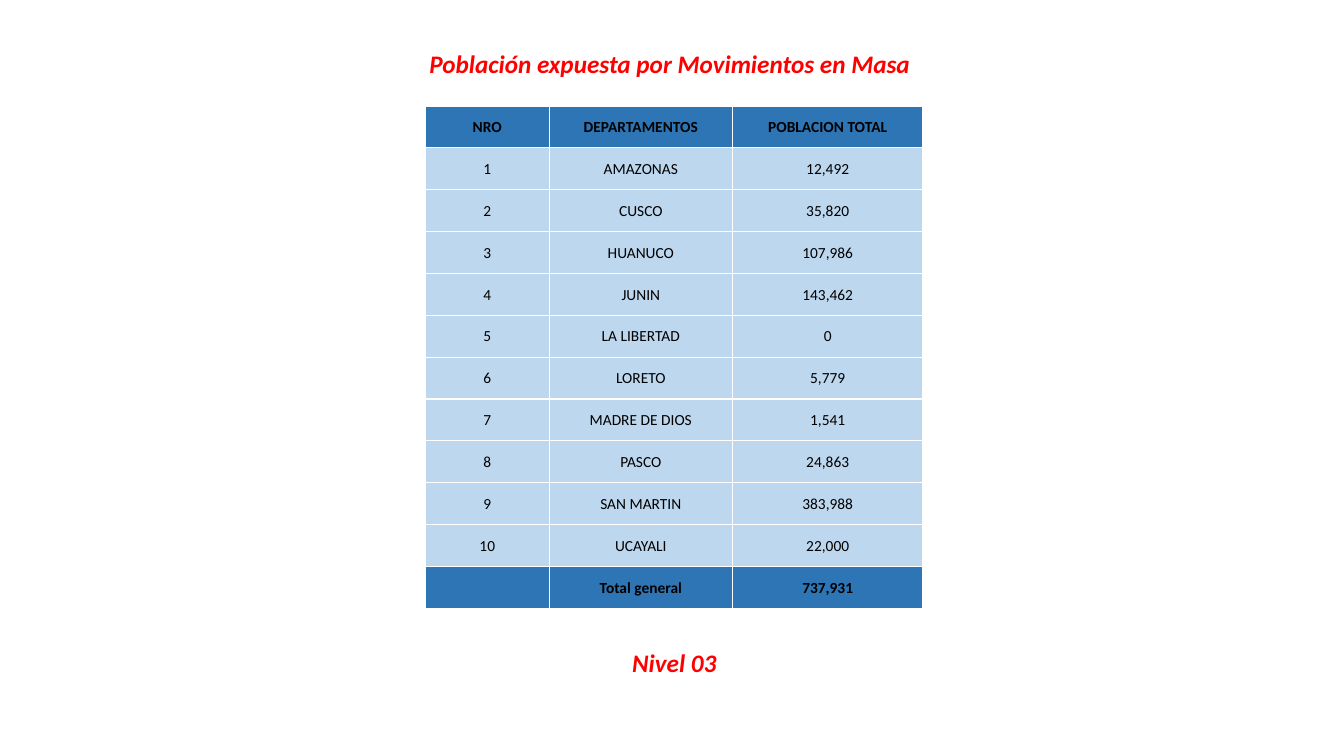
"""Build the slide on population exposed to mass movements."""
from lxml import etree
from pptx import Presentation
from pptx import util as u
from pptx.dml.color import RGBColor
from pptx.enum import text
from pptx.oxml.ns import qn

FONT = "Calibri"
RED, BLACK, WHITE = "FF0000", "000000", "FFFFFF"
DARK_BLUE, LIGHT_BLUE = "2E75B6", "BDD7EE"

HEADINGS = [
    ("Población expuesta por Movimientos en Masa", 10.49, 1.09, 12.78, False),
    ("Nivel 03", 15.6, 16.18, 2.79, True),
]
HEADER = ("NRO", "DEPARTAMENTOS", "POBLACION TOTAL")
DEPARTMENTS = [
    ("AMAZONAS", "12,492"),
    ("CUSCO", "35,820"),
    ("HUANUCO", "107,986"),
    ("JUNIN", "143,462"),
    ("LA LIBERTAD", "0"),
    ("LORETO", "5,779"),
    ("MADRE DE DIOS", "1,541"),
    ("PASCO", "24,863"),
    ("SAN MARTIN", "383,988"),
    ("UCAYALI", "22,000"),
]
TOTAL = ("", "Total general", "737,931")
LEFT, TOP, HEIGHT = 10.72, 2.67, 12.67
COLUMNS = (3.12, 4.62, 4.8)


def color(value):
    return RGBColor.from_string(value)


def write(tf, words, size, ink, bold, italic=False):
    p = tf.paragraphs[0]
    p.alignment = text.PP_ALIGN.CENTER
    if words:
        p.add_run().text = words
    f = p.font
    f.name, f.size, f.bold, f.italic = FONT, u.Pt(size), bold, italic
    f.color.rgb = color(ink)


def add_heading(slide, words, left, top, width, wrap):
    box = slide.shapes.add_textbox(u.Cm(left), u.Cm(top), u.Cm(width), u.Cm(1.02))
    tf = box.text_frame
    tf.word_wrap = wrap
    tf.auto_size = text.MSO_AUTO_SIZE.SHAPE_TO_FIT_TEXT
    write(tf, words, 18, RED, True, True)


def add_borders(cell):
    tc_pr = cell._tc.get_or_add_tcPr()
    for i, side in enumerate(("lnL", "lnR", "lnT", "lnB")):
        ln = etree.Element(qn(f"a:{side}"), w=str(u.Pt(1)))
        fill = etree.SubElement(ln, qn("a:solidFill"))
        etree.SubElement(fill, qn("a:srgbClr"), val=WHITE)
        tc_pr.insert(i, ln)


def add_population_table(slide):
    numbered = [(str(n), *row) for n, row in enumerate(DEPARTMENTS, 1)]
    rows = [HEADER, *numbered, TOTAL]
    frame = slide.shapes.add_table(len(rows), len(COLUMNS), u.Cm(LEFT), u.Cm(TOP),
                                   u.Cm(sum(COLUMNS)), u.Cm(HEIGHT))
    table = frame.table
    for column, width in zip(table.columns, COLUMNS):
        column.width = u.Cm(width)
    for r, row in enumerate(rows):
        table.rows[r].height = u.Cm(HEIGHT / len(rows))
        strong = row in (HEADER, TOTAL)
        for c, words in enumerate(row):
            cell = table.cell(r, c)
            cell.margin_left = cell.margin_right = cell.margin_top = u.Cm(0.02)
            cell.margin_bottom = 0
            cell.vertical_anchor = text.MSO_ANCHOR.MIDDLE
            cell.fill.solid()
            cell.fill.fore_color.rgb = color(DARK_BLUE if strong else LIGHT_BLUE)
            add_borders(cell)
            write(cell.text_frame, words, 11, BLACK, strong)


def main():
    prs = Presentation()
    prs.slide_width, prs.slide_height = u.Cm(33.87), u.Cm(19.05)
    slide = prs.slides.add_slide(prs.slide_layouts[6])
    for heading in HEADINGS:
        add_heading(slide, *heading)
    add_population_table(slide)
    prs.save("out.pptx")


if __name__ == "__main__":
    main()
